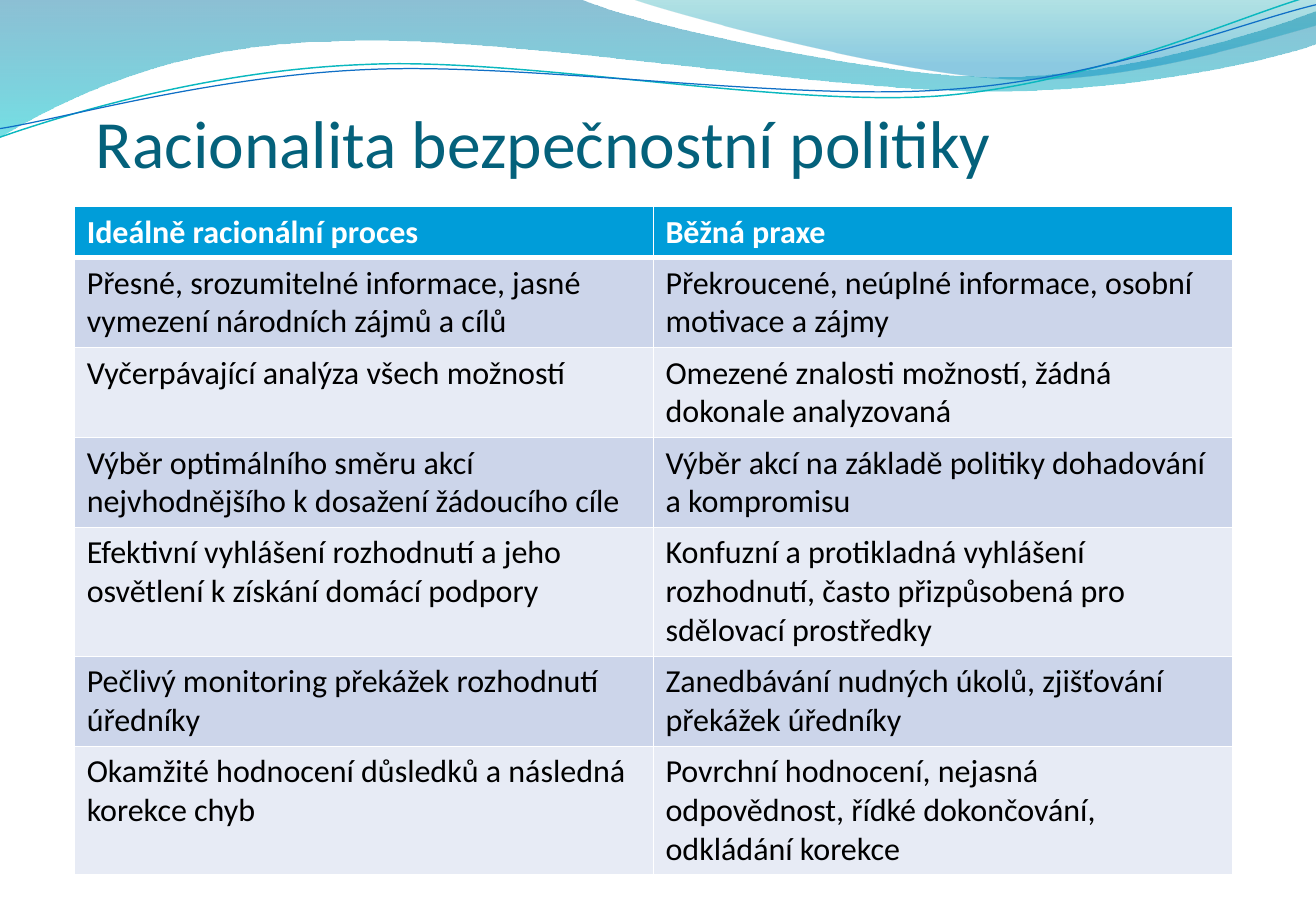
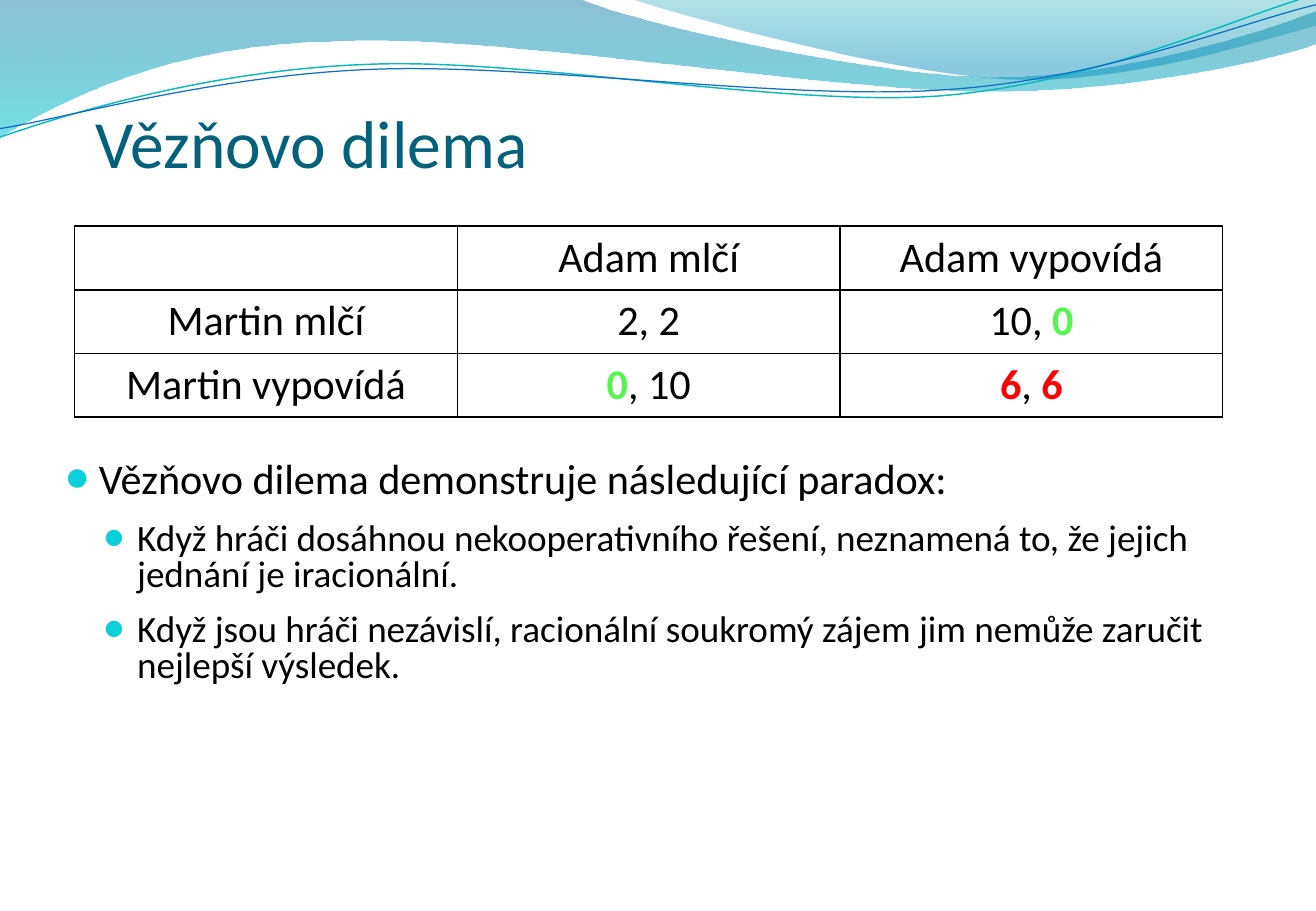
from lxml import etree
from pptx import Presentation
from pptx.dml.color import RGBColor
from pptx.enum.text import MSO_ANCHOR, MSO_AUTO_SIZE, PP_ALIGN
from pptx.oxml.ns import qn
from pptx.util import Cm, Pt

LEFT, CENTER = PP_ALIGN.LEFT, PP_ALIGN.CENTER
BOTTOM, NO_FIT = MSO_ANCHOR.BOTTOM, MSO_AUTO_SIZE.NONE
FONT = "Calibri"
HEX = {
    "title": "04617B", "text": "000000", "white": "FFFFFF", "head": "009DD9",
    "odd": "CCD5EA", "even": "E7EBF5", "bullet": "0BD0D9",
    "good": "55F54D", "bad": "FF0000",
    "deep": "0074A1", "aqua": "00C6CF", "teal": "00A1A9", "sky": "008BBF",
    "cyan": "0AB8BF", "blue": "0F6FC6",
}

# Outlines in cm: two numbers make a straight step, six make a Bezier curve.
# Stops are (position, colour, opacity in percent).
BANDS = [
    {"stops": [(0, "deep", 45), (1, "aqua", 55)], "steps": [
        (0, -0.03), (12.12, -0.03),
        (13.08, 0.43, 18.26, 1.6, 20.88, 1.6),
        (23.47, 1.6, 26.37, 0.66, 27.51, 0.23), (27.53, 0.91),
        (27.05, 1.12, 23.93, 1.93, 20.52, 1.9),
        (17.12, 1.9, 10.52, 0.71, 7.09, 0.86),
        (3.56, 0.89, 1.27, 2.11, -0.03, 2.87)]},
    {"stops": [(0, "teal", 30), (0.8, "sky", 45)], "steps": [
        (13.18, -0.03),
        (14.02, 0.28, 18.77, 1.57, 21.16, 1.65),
        (23.55, 1.75, 26.47, 0.81, 27.51, 0.53), (27.51, 0)]},
    {"line": ("cyan", 0.85), "steps": [
        (0, 2.87),
        (1.32, 2.41, 4.34, 1.47, 7.62, 1.35),
        (10.87, 1.19, 16.31, 2.24, 19.61, 2.01),
        (22.91, 1.75, 25.83, 0.36, 27.46, -0.1)]},
    {"line": ("blue", 0.75), "steps": [
        (0, 2.69),
        (1.3, 2.49, 4.5, 1.57, 7.8, 1.45),
        (11.07, 1.32, 16.43, 2.11, 19.71, 1.88),
        (23.01, 1.68, 25.91, 0.48, 27.51, 0.1)]},
]

POLICY = [
    ("Ideálně racionální proces", "Běžná praxe"),
    ("Přesné, srozumitelné informace, jasné vymezení národních zájmů a cílů",
     "Překroucené, neúplné informace, osobní motivace a zájmy"),
    ("Vyčerpávající analýza všech možností",
     "Omezené znalosti možností, žádná dokonale analyzovaná"),
    ("Výběr optimálního směru akcí nejvhodnějšího k dosažení žádoucího cíle",
     "Výběr akcí na základě politiky dohadování a kompromisu"),
    ("Efektivní vyhlášení rozhodnutí a jeho osvětlení k získání domácí podpory",
     "Konfuzní a protikladná vyhlášení rozhodnutí, často přizpůsobená pro "
     "sdělovací prostředky"),
    ("Pečlivý monitoring překážek rozhodnutí úředníky",
     "Zanedbávání nudných úkolů, zjišťování překážek úředníky"),
    ("Okamžité hodnocení důsledků a následná korekce chyb",
     "Povrchní hodnocení, nejasná odpovědnost, řídké dokončování, "
     "odkládání korekce"),
]
LINES = [1, 2, 2, 2, 3, 2, 3]

# A cell is a string, or a list of runs where (text, colour) stands out.
PAYOFFS = [
    ("", "Adam mlčí", "Adam vypovídá"),
    ("Martin mlčí", "2, 2", ["10, ", ("0", "good")]),
    ("Martin vypovídá", [("0", "good"), ", 10"],
     [("6", "bad"), ", ", ("6", "bad")]),
]

PARADOX = [
    (1, "Vězňovo dilema demonstruje následující paradox:"),
    (2, "Když hráči dosáhnou nekooperativního řešení, neznamená to, "
        "že jejich jednání je iracionální."),
    (2, "Když jsou hráči nezávislí, racionální soukromý zájem jim nemůže "
        "zaručit nejlepší výsledek."),
]
LEVELS = {1: (25, 0.71), 2: (22, 1.51)}


def rgb(name):
    return RGBColor.from_string(HEX[name])


def node(parent, tag, **attrs):
    return etree.SubElement(parent, qn(tag), **attrs)


def write(para, text, size=19, color="text", bold=False, align=LEFT):
    para.alignment = align
    para.font.size = Pt(size)
    if not text:
        return
    for part in [text] if isinstance(text, str) else text:
        plain = isinstance(part, str)
        run = para.add_run()
        run.text, tint = (part, color) if plain else part
        font = run.font
        font.name, font.size = FONT, Pt(size)
        font.bold = bold or not plain
        font.color.rgb = rgb(tint)


def draw(slide, steps, close):
    """Build the outline from its end points, then bend the curved steps."""
    ends = [(Cm(step[-2]), Cm(step[-1])) for step in steps]
    pen = slide.shapes.build_freeform(*ends[0])
    pen.add_line_segments(ends[1:], close=close)
    wave = pen.convert_to_shape()
    sides = list(wave.element.iter(qn("a:lnTo")))
    for side, step in zip(sides, steps[1:]):
        if len(step) == 6:
            side.tag = qn("a:cubicBezTo")
            side.clear()
            for x, y in zip(step[::2], step[1::2]):
                node(side, "a:pt", x=str(Cm(x) - wave.left),
                     y=str(Cm(y) - wave.top))
    return wave


def add_bands(slide):
    """Draw the waves and hand them to the layout, behind its text."""
    tree = slide.slide_layout.shapes.element
    for i, band in enumerate(BANDS):
        wave = draw(slide, band["steps"], "stops" in band)
        wave.name = f"Wave {i + 1}"
        wave.shadow.inherit = False
        if "stops" in band:
            wave.line.fill.background()
            wave.fill.gradient()
            wave.fill.gradient_angle = 270
            for stop, (place, color, _) in zip(wave.fill.gradient_stops,
                                               band["stops"]):
                stop.position = place
                stop.color.rgb = rgb(color)
            tints = wave.element.iter(qn("a:srgbClr"))
            for tint, (_, _, alpha) in zip(tints, band["stops"]):
                node(tint, "a:alpha", val=str(alpha * 1000))
        else:
            color, width = band["line"]
            wave.fill.background()
            wave.line.color.rgb = rgb(color)
            wave.line.width = Pt(width)
        next(wave.element.iter(qn("p:cNvPr"))).set("id", str(100 + i))
        tree.insert(2 + i, wave.element)


def add_title(slide, text):
    title = slide.shapes.title
    title.left, title.top = Cm(2), Cm(2.2)
    title.width, title.height = Cm(23.6), Cm(1.61)
    frame = title.text_frame
    frame.auto_size, frame.vertical_anchor = NO_FIT, BOTTOM
    frame.margin_left = frame.margin_right = frame.margin_bottom = 0
    frame.margin_top = Cm(0.13)
    write(frame.paragraphs[0], text, size=40, color="title")


def edge(cell, color, **widths):
    """Give the cell its borders, ahead of the fill as the schema asks."""
    props = cell._tc.get_or_add_tcPr()
    for i, side in enumerate("LRTB"):
        line = etree.Element(qn("a:ln" + side),
                             w=str(Pt(widths.get(side, 1))))
        node(node(line, "a:solidFill"), "a:srgbClr", val=HEX[color])
        props.insert(i, line)


def add_grid(slide, rows, top, width, heights):
    """Add an evenly split table; yield row number, cell and its content."""
    count = len(rows[0])
    frame = slide.shapes.add_table(len(rows), count, Cm(1.56), Cm(top),
                                   Cm(width), Cm(sum(heights)))
    table = frame.table
    table.horz_banding = False
    for col in table.columns:
        col.width = Cm(width / count)
    for r, (row, height) in enumerate(zip(rows, heights)):
        table.rows[r].height = Cm(height)
        for c, text in enumerate(row):
            yield r, table.cell(r, c), text


def add_policy(slide):
    heights = [0.25 + 0.8 * n for n in LINES]
    for r, cell, text in add_grid(slide, POLICY, 4.32, 24.2, heights):
        head = r == 0
        cell.fill.solid()
        cell.fill.fore_color.rgb = rgb(
            "head" if head else "odd" if r % 2 else "even")
        edge(cell, "white", **({"B": 3} if head else {"T": 3} if r == 1 else {}))
        write(cell.text_frame.paragraphs[0], text, bold=head,
              color="white" if head else "text")


def add_payoffs(slide):
    for _, cell, text in add_grid(slide, PAYOFFS, 4.73, 24, [1.31] * 3):
        cell.fill.background()
        edge(cell, "text")
        write(cell.text_frame.paragraphs[0], text, size=25, align=CENTER)


def add_paradox(slide):
    frame = slide.shapes.add_textbox(Cm(1.11), Cm(9.54), Cm(25.3),
                                     Cm(8.76)).text_frame
    frame.word_wrap = True
    for i, (level, text) in enumerate(PARADOX):
        para = frame.add_paragraph() if i else frame.paragraphs[0]
        size, indent = LEVELS[level]
        write(para, text, size=size)
        para.level = level - 1
        para.line_spacing = 0.8
        para.space_before = para.space_after = Pt(6)
        props = para._p.get_or_add_pPr()
        props.set("marL", str(Cm(indent)))
        props.set("indent", str(-Cm(0.71)))
        node(node(props, "a:buClr"), "a:srgbClr", val=HEX["bullet"])
        node(props, "a:buSzPct", val="95000")
        node(props, "a:buFont", typeface=FONT)
        node(props, "a:buChar", char="●")


SLIDES = [
    ("Racionalita bezpečnostní politiky", [add_bands, add_policy]),
    ("Vězňovo dilema", [add_payoffs, add_paradox]),
]


def main():
    prs = Presentation()
    prs.slide_width, prs.slide_height = Cm(27.51), Cm(19.05)
    layout = prs.slide_layouts[5]
    for title, parts in SLIDES:
        slide = prs.slides.add_slide(layout)
        add_title(slide, title)
        for add in parts:
            add(slide)
    prs.save("out.pptx")


if __name__ == "__main__":
    main()
